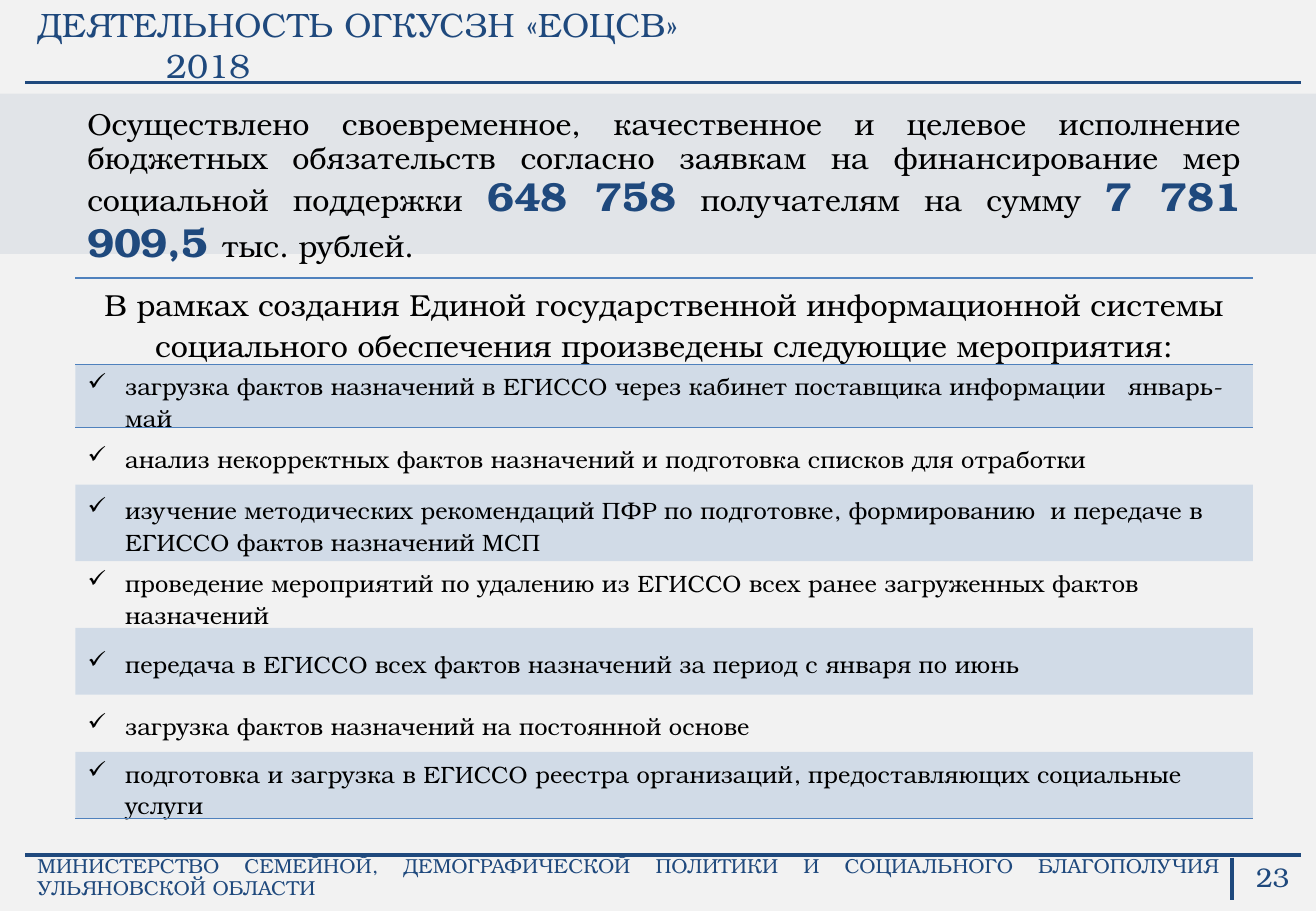
from lxml import etree
from pptx import Presentation
from pptx.dml.color import RGBColor
from pptx.enum.shapes import MSO_CONNECTOR, MSO_SHAPE
from pptx.enum.text import MSO_ANCHOR, PP_ALIGN
from pptx.oxml import parse_xml
from pptx.oxml.ns import qn
from pptx.util import Inches, Pt

LEFT, CENTER, RIGHT, JUSTIFY = PP_ALIGN.LEFT, PP_ALIGN.CENTER, PP_ALIGN.RIGHT, PP_ALIGN.JUSTIFY
TOP, MIDDLE = MSO_ANCHOR.TOP, MSO_ANCHOR.MIDDLE
FONT = "TeX Gyre Bonum"
NAVY, BLUE, BLACK, PALE = "1F497D", "4F81BD", "000000", "F2F2F2"
WIDTH, HEIGHT = 10.83, 7.5
EDGE, RULE_RIGHT = 0.21, 10.71
BODY_LEFT, BODY_WIDTH = 0.62, 9.69
DIVIDER = 10.14
NO_STYLE_NO_GRID = "{2D5ABB26-0587-4C30-8999-92F81FD0307C}"
DRAWING_NS = "http://schemas.openxmlformats.org/drawingml/2006/main"


def write(paragraph, *runs, size=18, color=BLACK, align=LEFT, spacing=None):
    """Fill a paragraph; a run given as (text, size, color) is bold."""
    paragraph.alignment = align
    if spacing:
        paragraph.line_spacing = spacing
    for item in runs:
        bold = isinstance(item, tuple)
        text, run_size, run_color = item if bold else (item, size, color)
        run = paragraph.add_run()
        run.text = text
        run.font.name = FONT
        run.font.size = Pt(run_size)
        run.font.bold = bold
        run.font.color.rgb = RGBColor.from_string(run_color)


def paint(fill, properties, color, opacity):
    """Apply a solid fill with the given opacity in percent."""
    fill.solid()
    fill.fore_color.rgb = RGBColor.from_string(color)
    solid = properties.find(qn("a:solidFill"))
    etree.SubElement(solid[0], qn("a:alpha"), val=str(opacity * 1000))


presentation = Presentation()
presentation.slide_width = Inches(WIDTH)
presentation.slide_height = Inches(HEIGHT)
slide = presentation.slides.add_slide(presentation.slide_layouts[6])
slide.background.fill.solid()
slide.background.fill.fore_color.rgb = RGBColor.from_string(PALE)

# Band behind the summary
band = slide.shapes.add_shape(
    MSO_SHAPE.RECTANGLE, 0, Inches(0.77), Inches(WIDTH), Inches(1.32))
band.shadow.inherit = False
band.line.fill.background()
paint(band.fill, band._element.spPr, NAVY, 8)

# Header rule, footer rule, page number divider
for x1, y1, x2, y2 in [
    (EDGE, 0.68, RULE_RIGHT, 0.68),
    (EDGE, 7.04, RULE_RIGHT, 7.04),
    (DIVIDER, 7.06, DIVIDER, 7.41),
]:
    rule = slide.shapes.add_connector(
        MSO_CONNECTOR.STRAIGHT, Inches(x1), Inches(y1), Inches(x2), Inches(y2))
    rule.line.color.rgb = RGBColor.from_string(NAVY)
    rule.line.width = Pt(2)
    etree.SubElement(rule._element.spPr, qn("a:effectLst"))

# Title, summary, footer and page number
frames = []
for left, top, width, height, anchor in [
    (EDGE, 0.21, 10.49, 0.31, MIDDLE),
    (BODY_LEFT, 0.84, BODY_WIDTH, 1.11, TOP),
    (EDGE, 7.06, DIVIDER - EDGE, 0.33, MIDDLE),
    (10.11, 7.02, 0.6, 0.4, MIDDLE),
]:
    box = slide.shapes.add_textbox(
        Inches(left), Inches(top), Inches(width), Inches(height))
    box.text_frame.word_wrap = True
    box.text_frame.vertical_anchor = anchor
    frames.append(box.text_frame)
title, summary, footer, page_number = frames

write(title.paragraphs[0], "ДЕЯТЕЛЬНОСТЬ ОГКУСЗН «ЕОЦСВ»", size=20, color=NAVY)
year = title.add_paragraph()
write(year, "2018", size=20, color=NAVY)
year._p.get_or_add_pPr().set("marL", str(Inches(1.06)))
write(
    summary.paragraphs[0],
    "Осуществлено своевременное, качественное и целевое исполнение бюджетных "
    "обязательств согласно заявкам на финансирование мер социальной поддержки ",
    ("648 758", 24, NAVY),
    " получателям на сумму ",
    ("7 781 909,5 ", 24, NAVY),
    "тыс. рублей.",
    align=JUSTIFY, spacing=0.93)
write(
    footer.paragraphs[0],
    "МИНИСТЕРСТВО СЕМЕЙНОЙ, ДЕМОГРАФИЧЕСКОЙ ПОЛИТИКИ И СОЦИАЛЬНОГО "
    "БЛАГОПОЛУЧИЯ УЛЬЯНОВСКОЙ ОБЛАСТИ",
    size=12, color=NAVY, align=JUSTIFY, spacing=0.9)
write(page_number.paragraphs[0], "23", size=16, color=NAVY, align=RIGHT)

# Table of measures: a heading row, then checked items
measures = [
    ("В рамках создания Единой государственной информационной системы "
     "социального обеспечения произведены следующие мероприятия:", 0.71),
    ("загрузка фактов назначений в ЕГИССО через кабинет поставщика информации   январь-май", 0.52),
    ("анализ некорректных фактов назначений и подготовка списков для отработки", 0.47),
    ("изучение методических рекомендаций ПФР по подготовке, формированию  и передаче "
     "в ЕГИССО фактов назначений МСП", 0.63),
    ("проведение мероприятий по удалению из ЕГИССО всех ранее загруженных фактов назначений", 0.55),
    ("передача в ЕГИССО всех фактов назначений за период с января по июнь", 0.55),
    ("загрузка фактов назначений на постоянной основе", 0.47),
    ("подготовка и загрузка в ЕГИССО реестра организаций, предоставляющих социальные услуги", 0.55),
]
table = slide.shapes.add_table(
    len(measures), 1, Inches(BODY_LEFT), Inches(2.29), Inches(BODY_WIDTH),
    Inches(sum(height for _, height in measures))).table
table._tbl.tblPr.find(qn("a:tableStyleId")).text = NO_STYLE_NO_GRID

last = len(measures) - 1
borders = {0: ("lnT", "lnB"), 1: ("lnT",), last: ("lnB",)}
for index, (text, height) in enumerate(measures):
    table.rows[index].height = Inches(height)
    cell = table.cell(index, 0)
    cell.vertical_anchor = MIDDLE
    cell.margin_top, cell.margin_bottom = Inches(0.05), 0
    properties = cell._tc.get_or_add_tcPr()
    if index % 2:
        paint(cell.fill, properties, BLUE, 20)
    else:
        cell.fill.background()
    for position, side in enumerate(borders.get(index, ())):
        properties.insert(position, parse_xml(
            f'<a:{side} xmlns:a="{DRAWING_NS}" w="{Pt(1)}"><a:solidFill>'
            f'<a:srgbClr val="{BLUE}"/></a:solidFill></a:{side}>'))

    paragraph = cell.text_frame.paragraphs[0]
    if index == 0:
        write(paragraph, text, align=CENTER)
        continue
    write(paragraph, text, size=14)
    bullet = paragraph._p.get_or_add_pPr()
    bullet.set("marL", str(Inches(0.31)))
    bullet.set("indent", str(-Inches(0.31)))
    etree.SubElement(bullet, qn("a:buChar"), char="✓")

presentation.save("out.pptx")
